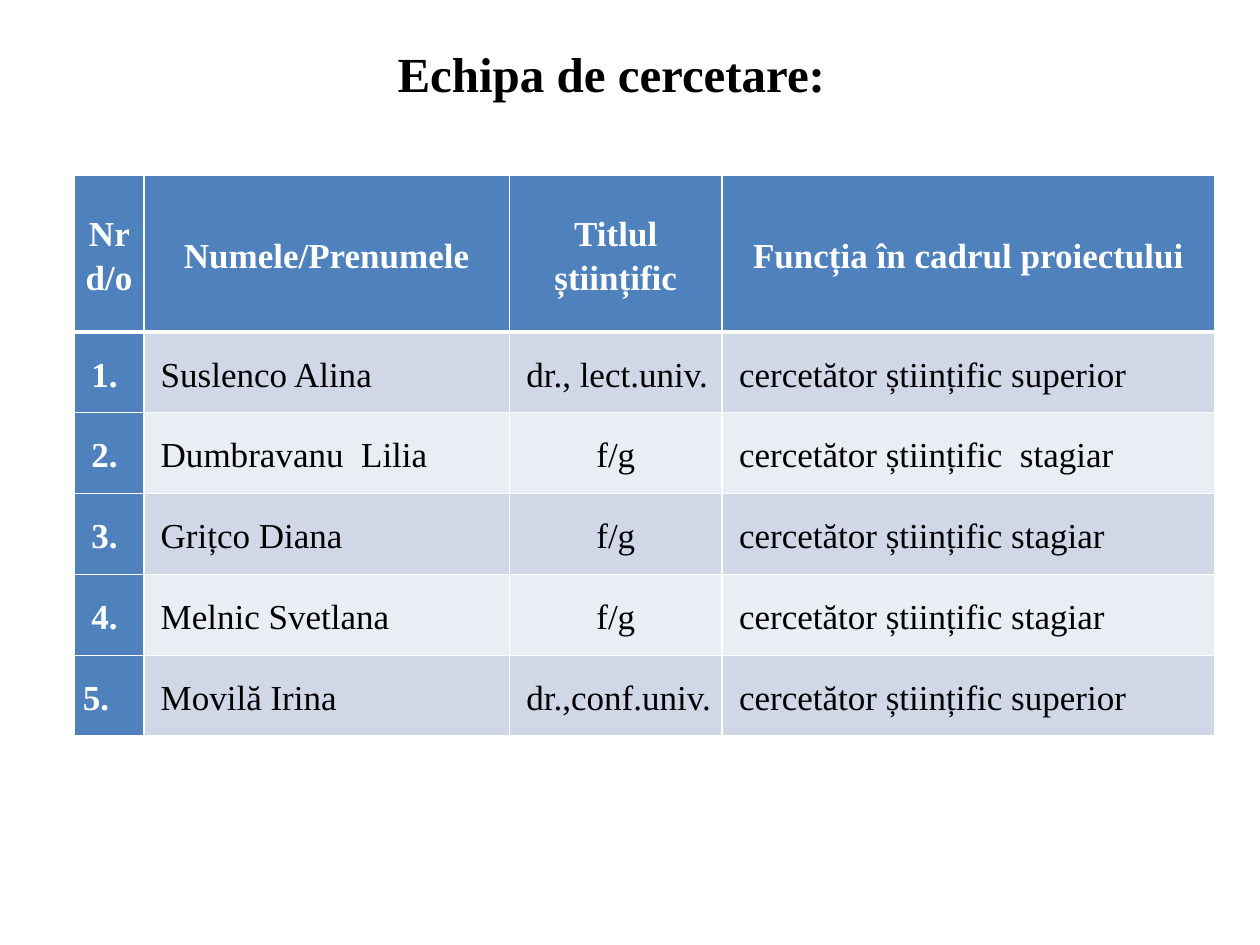
from lxml.etree import SubElement as Sub
from pptx import Presentation
from pptx.dml.color import RGBColor as RGB
from pptx.enum.text import MSO_ANCHOR as Anchor, MSO_AUTO_SIZE as Fit, PP_ALIGN as Align
from pptx.oxml.ns import qn
from pptx.util import Cm, Pt

COLORS = {"head": "4F81BD", "odd": "D0D8E8", "even": "E9EDF4",
          "light": "FFFFFF", "dark": "000000"}
FONT = "Times New Roman"
PAD = 0.17  # cell inset in cm; doubled where the text is indented

HEADS = ["Nr d/o", "Numele/Prenumele", "Titlul științific",
         "Funcția în cadrul proiectului"]
TEAM = [
    ["1.", "Suslenco Alina", "dr., lect.univ.", "cercetător științific superior"],
    ["2.", "Dumbravanu  Lilia", "f/g", "cercetător științific  stagiar"],
    ["3.", "Grițco Diana", "f/g", "cercetător științific stagiar"],
    ["4.", "Melnic Svetlana", "f/g", "cercetător științific stagiar"],
    ["5.", "Movilă Irina", "dr.,conf.univ.", "cercetător științific superior"],
]
COLS = [1.4, 7.37, 4.29, 9.93]
HEAD_H, ROW_H = 3.15, 1.63


def add_run(para, text, size, color, bold):
    run = para.add_run()
    run.text = text
    font = run.font
    font.name, font.size, font.bold = FONT, Pt(size), bold
    font.color.rgb = RGB.from_string(COLORS[color])


def add_edge(cell, side, width):
    line = Sub(cell._tc.get_or_add_tcPr(), qn("a:ln" + side), w=str(Pt(width)))
    fill = Sub(line, qn("a:solidFill"))
    Sub(fill, qn("a:srgbClr"), val=COLORS["light"])


def fill_cell(cell, text, row, col):
    # Borders come before the fill, with a thick rule under the header
    for side in "LRTB":
        thick = (row, side) in [(0, "B"), (1, "T")]
        add_edge(cell, side, 3 if thick else 1)
    label = row == 0 or col == 0
    band = "head" if label else "odd" if row % 2 else "even"
    cell.fill.solid()
    cell.fill.fore_color.rgb = RGB.from_string(COLORS[band])

    # Text
    mid = row == 0 or text == "f/g"
    flush = mid or text == "5."
    cell.margin_left = Cm(PAD if flush else 2 * PAD)
    cell.margin_right = Cm(PAD)
    cell.margin_top = cell.margin_bottom = 0
    cell.vertical_anchor = Anchor.MIDDLE
    para = cell.text_frame.paragraphs[0]
    para.alignment = Align.CENTER if mid else Align.LEFT
    para.line_spacing = 1.15
    add_run(para, text, 20, "light" if label else "dark", label)


def add_title(slide, left, top, width, height):
    title = slide.shapes.title
    title.left, title.top = Cm(left), Cm(top)
    title.width, title.height = Cm(width), Cm(height)
    frame = title.text_frame
    frame.word_wrap = True
    frame.auto_size = Fit.SHAPE_TO_FIT_TEXT
    para = frame.paragraphs[0]
    para.alignment = Align.CENTER
    add_run(para, "Echipa de cercetare:", 28, "dark", True)


def add_team(slide, left, top):
    rows = [HEADS] + TEAM
    height = HEAD_H + ROW_H * len(TEAM)
    table = slide.shapes.add_table(len(rows), len(COLS), Cm(left), Cm(top),
                                   Cm(sum(COLS)), Cm(height)).table
    table.first_col = True
    for col, width in enumerate(COLS):
        table.columns[col].width = Cm(width)
    for row, texts in enumerate(rows):
        table.rows[row].height = Cm(ROW_H if row else HEAD_H)
        for col, text in enumerate(texts):
            fill_cell(table.cell(row, col), text, row, col)


def main():
    deck = Presentation()
    deck.slide_width, deck.slide_height = Cm(25.4), Cm(19.05)
    slide = deck.slides.add_slide(deck.slide_layouts[5])
    add_title(slide, 1.9, 0.74, 20.85, 1.45)
    add_team(slide, 1.5, 3.54)
    deck.save("out.pptx")


if __name__ == "__main__":
    main()
